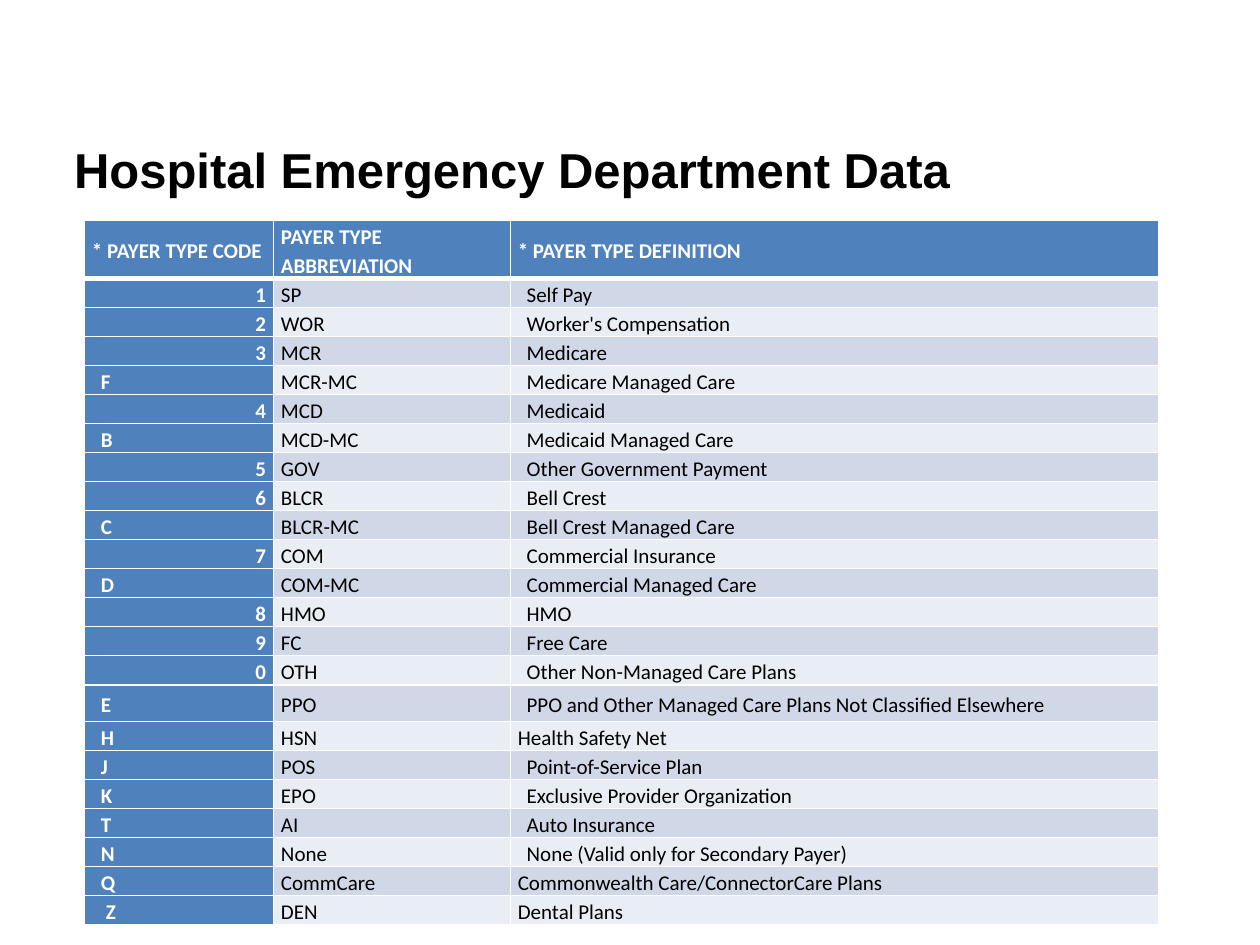
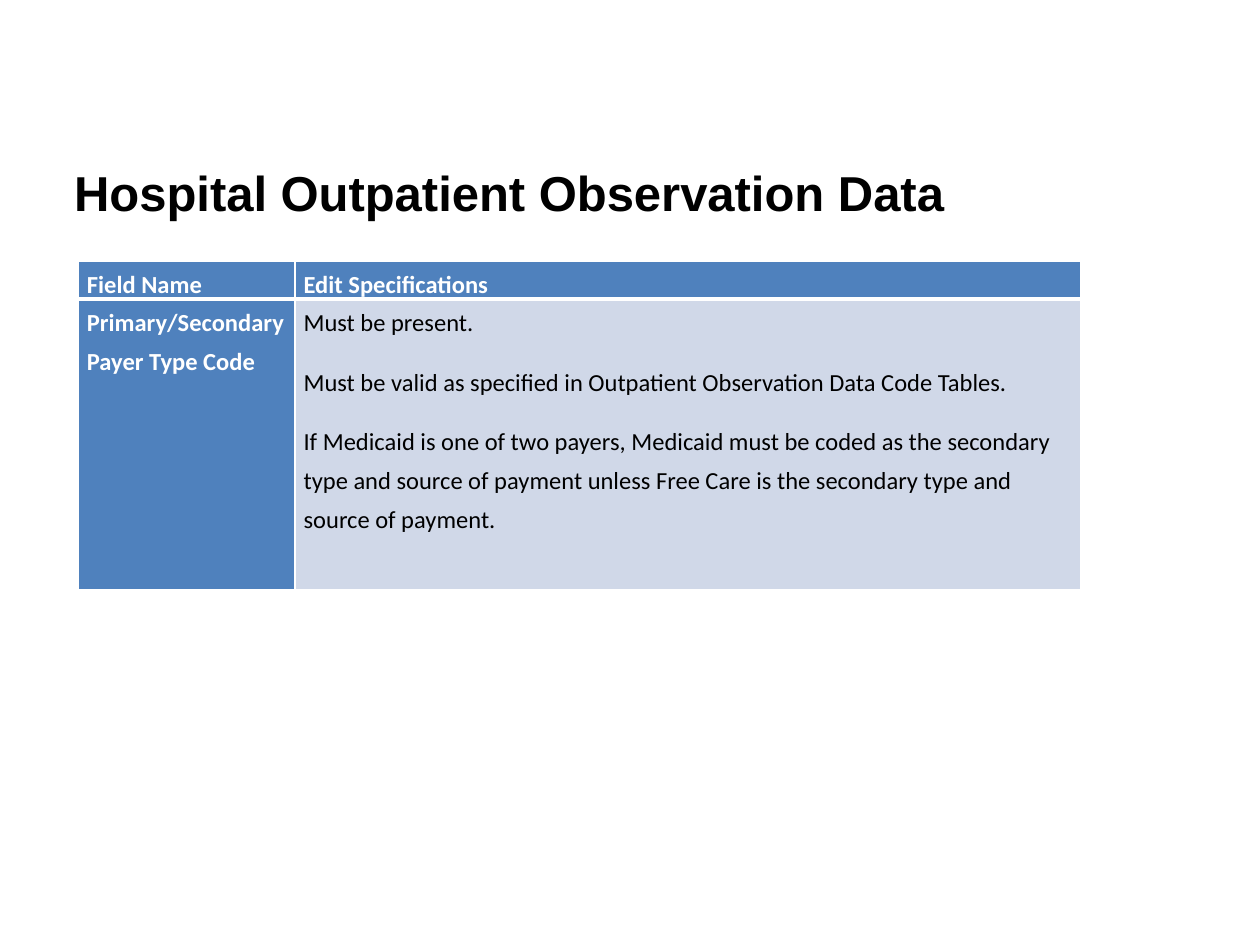
import pptx
import pptx.util
import pptx.dml.color
import pptx.enum.text
import pptx.oxml.ns
import lxml.etree

Inches, Pt = pptx.util.Inches, pptx.util.Pt
ANCHOR, ALIGN = pptx.enum.text.MSO_ANCHOR, pptx.enum.text.PP_ALIGN

WHITE, BLACK, BLUE = "FFFFFF", "000000", "4F81BD"
BANDS = ("D0D8E8", "E9EDF4")

PAYERS = [
    ("1", "SP", "Self Pay"),
    ("2", "WOR", "Worker's Compensation"),
    ("3", "MCR", "Medicare"),
    ("F", "MCR-MC", "Medicare Managed Care"),
    ("4", "MCD", "Medicaid"),
    ("B", "MCD-MC", "Medicaid Managed Care"),
    ("5", "GOV", "Other Government Payment"),
    ("6", "BLCR", "Bell Crest"),
    ("C", "BLCR-MC", "Bell Crest Managed Care"),
    ("7", "COM", "Commercial Insurance"),
    ("D", "COM-MC", "Commercial Managed Care"),
    ("8", "HMO", "HMO"),
    ("9", "FC", "Free Care"),
    ("0", "OTH", "Other Non-Managed Care Plans"),
    ("E", "PPO", "PPO and Other Managed Care Plans Not Classified Elsewhere"),
    ("H", "HSN", "Health Safety Net"),
    ("J", "POS", "Point-of-Service Plan"),
    ("K", "EPO", "Exclusive Provider Organization"),
    ("T", "AI", "Auto Insurance"),
    ("N", "None", "None (Valid only for Secondary Payer)"),
    ("Q", "CommCare", "Commonwealth Care/ConnectorCare Plans"),
    ("Z", "DEN", "Dental Plans"),
]
FLUSH_CODES = ("H", "Q", "Z")

EDITS = [
    ("Field Name", "Edit Specifications"),
    ("Primary/Secondary Payer Type Code",
     "Must be present.\n"
     "Must be valid as specified in Outpatient Observation Data Code Tables.\n"
     "If Medicaid is one of two payers, Medicaid must be coded as the secondary "
     "type and source of payment unless Free Care is the secondary type and "
     "source of payment."),
]


def rgb(color):
    return pptx.dml.color.RGBColor.from_string(color)


def style_font(font, name, size, color, bold):
    font.name, font.size, font.bold = name, Pt(size), bold
    font.color.rgb = rgb(color)


def add_title(s, text, top):
    tf = s.shapes.add_textbox(Inches(0.49), Inches(top), Inches(8.79), Inches(0.7)).text_frame
    tf.word_wrap = True
    tf.vertical_anchor = ANCHOR.MIDDLE
    p = tf.paragraphs[0]
    p.text = text
    style_font(p.font, "Arial", 28, BLACK, True)


def set_borders(cell, widths):
    tc_pr = cell._tc.get_or_add_tcPr()
    for side, width in zip("LRTB", widths):
        ln = lxml.etree.SubElement(tc_pr, pptx.oxml.ns.qn(f"a:ln{side}"), w=str(Pt(width)))
        fill = lxml.etree.SubElement(ln, pptx.oxml.ns.qn("a:solidFill"))
        lxml.etree.SubElement(fill, pptx.oxml.ns.qn("a:srgbClr"), val=WHITE)


def add_grid(s, rows, left, top, col_widths, row_heights, size, margin, spacing, anchor):
    frame = s.shapes.add_table(len(rows), len(col_widths), Inches(left), Inches(top),
                               Inches(sum(col_widths)), Inches(sum(row_heights)))
    table = frame.table
    table.horz_banding = False
    for column, width in zip(table.columns, col_widths):
        column.width = Inches(width)
    for i, (row, values) in enumerate(zip(table.rows, rows)):
        row.height = Inches(row_heights[i])
        for j, (cell, text) in enumerate(zip(row.cells, values)):
            heading = i == 0 or j == 0
            set_borders(cell, (1, 1, 3 if i == 1 else 1, 3 if i == 0 else 1))
            cell.fill.solid()
            cell.fill.fore_color.rgb = rgb(BLUE if heading else BANDS[(i - 1) % 2])
            cell.margin_left = cell.margin_right = Inches(margin)
            cell.margin_top = cell.margin_bottom = 0
            cell.vertical_anchor = anchor
            cell.text = text
            for p in cell.text_frame.paragraphs:
                p.line_spacing = spacing
                style_font(p.font, "Calibri", size, WHITE if heading else BLACK, heading)
    return table


def payer_slide(s):
    add_title(s, "Hospital Emergency Department Data", 0.99)
    header = ("* PAYER TYPE CODE", "PAYER TYPE ABBREVIATION", "* PAYER TYPE DEFINITION")
    heights = [0.46] + [0.29 if code == "E" else 0.23 for code, _, _ in PAYERS]
    table = add_grid(s, [header] + PAYERS, 0.67, 1.75, (1.5, 1.88, 5.15), heights,
                     12, 0.06, 1.15, ANCHOR.MIDDLE)
    for i, (code, _, _) in enumerate(PAYERS, 1):
        code_cell, definition_cell = table.cell(i, 0), table.cell(i, 2)
        if code.isdigit():
            code_cell.text_frame.paragraphs[0].alignment = ALIGN.RIGHT
        else:
            code_cell.margin_left = Inches(0.17 if code == "Z" else 0.13)
        if code not in FLUSH_CODES:
            definition_cell.margin_left = Inches(0.13)


def edits_slide(s):
    add_title(s, "Hospital Outpatient Observation Data", 1.17)
    table = add_grid(s, EDITS, 0.62, 2.07, (1.72, 6.24), (0.29, 2.31),
                     14, 0.07, 1.3, ANCHOR.TOP)
    for cell in table.iter_cells():
        for k, p in enumerate(cell.text_frame.paragraphs):
            p.space_before = Pt(3 if k else 0)
            p.space_after = Pt(9)


def main():
    prs = pptx.Presentation()
    prs.slide_width, prs.slide_height = Inches(10), Inches(7.5)
    for build in (payer_slide, edits_slide):
        build(prs.slides.add_slide(prs.slide_layouts[6]))
    prs.save("out.pptx")


if __name__ == "__main__":
    main()
